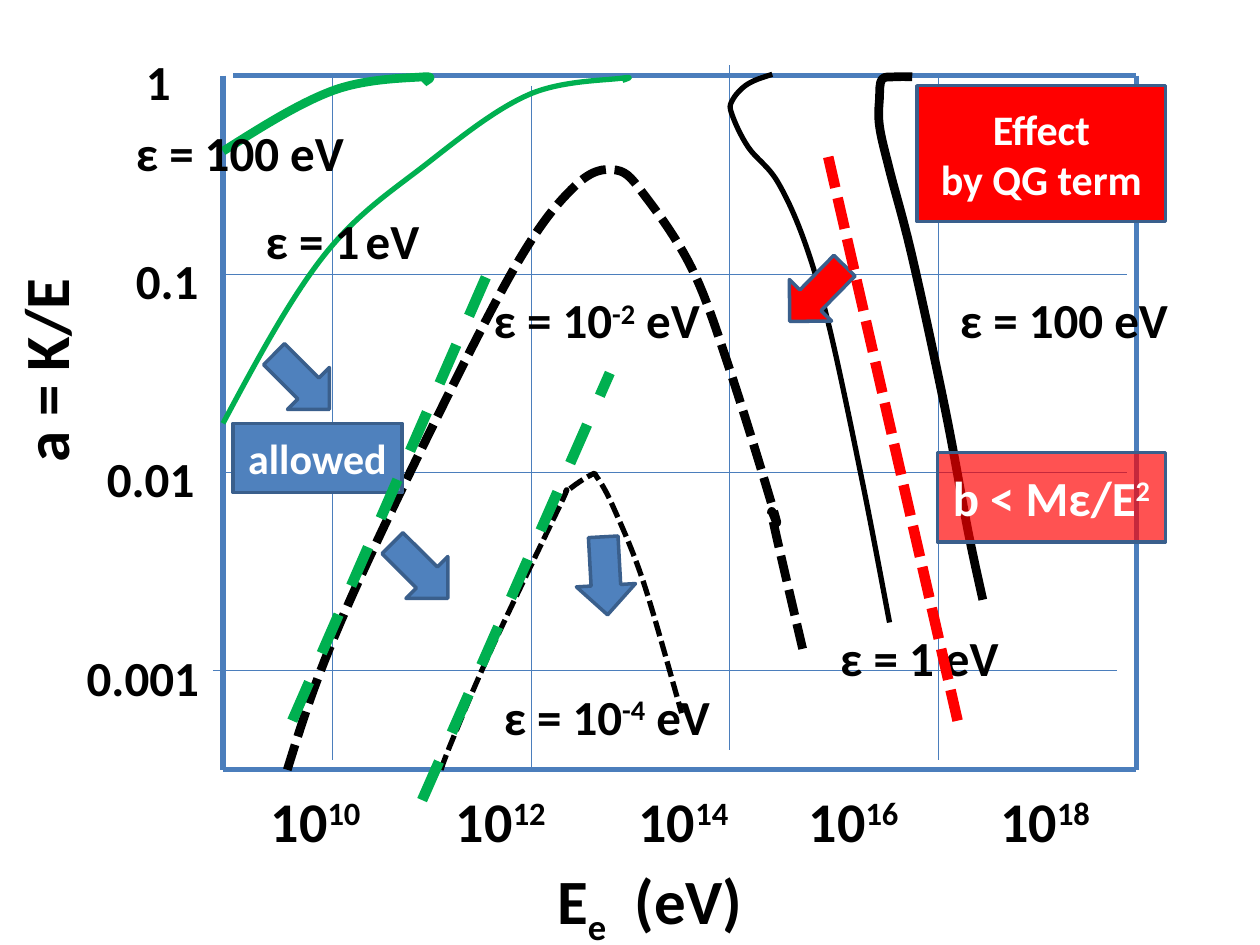
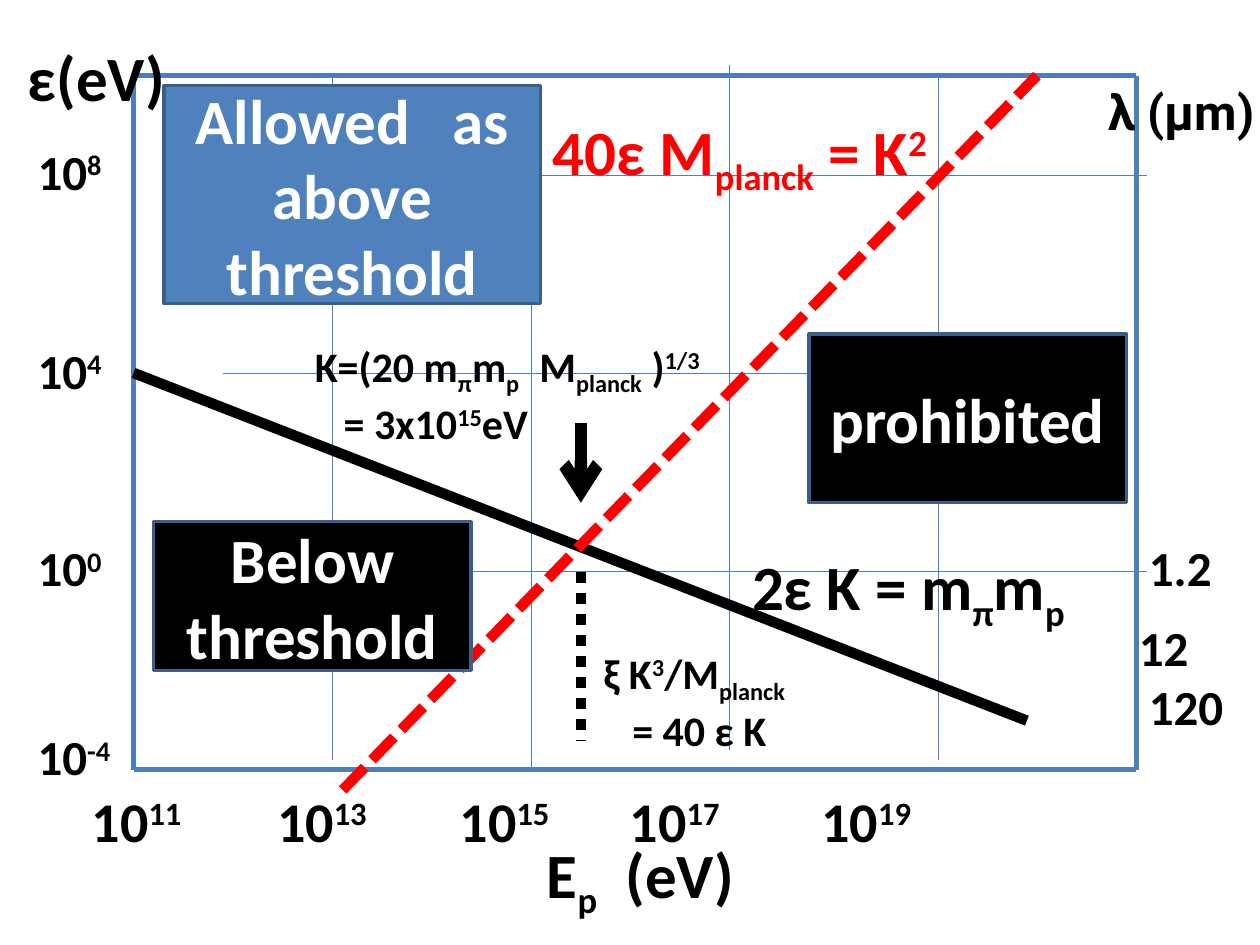
from pptx import Presentation, util as u
from pptx.dml.color import RGBColor
from pptx.enum import dml, shapes, text
from pptx.oxml import xmlchemy

BLACK = RGBColor(0x00, 0x00, 0x00)
WHITE = RGBColor(0xFF, 0xFF, 0xFF)
RED = RGBColor(0xFF, 0x00, 0x00)
GREEN = RGBColor(0x00, 0xB0, 0x50)
BLUE = RGBColor(0x4F, 0x81, 0xBD)
AXIS = RGBColor(0x4B, 0x7E, 0xBC)
EDGE = RGBColor(0x3A, 0x5F, 0x8C)
SOLID, DASH = None, dml.MSO_LINE.DASH
DOT, SHORT_DASH = dml.MSO_LINE.ROUND_DOT, dml.MSO_LINE.SQUARE_DOT

# Plot frame and grid, in inches
TOP, BOTTOM, RIGHT = 0.6, 6.11, 9.02
ROW = (BOTTOM - TOP) / 7
COLUMN_ORIGIN = 1.06
COLUMN = (RIGHT - COLUMN_ORIGIN) / 10.1
GRID_COLUMNS = ((2, 0), (4, 0.08), (6, -0.08), (8.1, 0))  # column, vertical shift
GRID_WIDTH, GRID_HEIGHT = 7.17, 5.43
TICK_TOP, TICK_WIDTH = 6.19, 7.78
TICK_STOPS = (0.28, 1.75, 3.2, 4.55, 6.07)
INDENT = 0.23

# Markup: {^x} raises, {_x} lowers, {>n} is a space widened by n points.
ENERGY_PLOT = {
    "left": 1.77, "top_left": 1.85,
    "grid_rows": ((6, 1.69), (2, 1.77), (4, 1.77)),  # row, left end
    "tick_left": 1.77, "exponents": (10, 12, 14, 16, 18),
}
# colour, width, dash, points that the curve passes through
CURVES = [
    (GREEN, 5, SOLID, [(1.77, 1.2), (2.64, 0.72), (3.36, 0.61), (3.36, 0.66)]),
    (GREEN, 3, SOLID, [(1.77, 3.36), (2.57, 2.03), (3.4, 1.29), (4.2, 0.75),
                       (4.94, 0.62), (4.94, 0.64)]),
    (BLACK, 3, SHORT_DASH, [(3.5, 6.11), (3.6, 5.85), (3.91, 5.13), (4.45, 4),
                            (4.5, 3.9), (4.69, 3.77), (4.74, 3.79), (4.87, 4.03),
                            (5.11, 4.63), (5.41, 5.66)]),
    (BLACK, 5, SHORT_DASH, [(2.28, 6.11), (2.63, 5.11), (3.24, 3.78), (4.07, 2.15),
                            (4.56, 1.48), (4.89, 1.35), (5.13, 1.57), (5.5, 2.15),
                            (5.8, 2.96), (6.15, 4.09), (6.13, 4.11), (6.37, 5.15)]),
    (BLACK, 3, SOLID, [(6.13, 0.59), (5.93, 0.67), (5.81, 0.8), (5.81, 0.91),
                       (5.94, 1.17), (6.17, 1.44), (6.39, 1.93), (6.59, 2.63),
                       (6.85, 3.85), (7.06, 4.94)]),
    (BLACK, 5, SOLID, [(7.24, 0.61), (7.11, 0.61), (7, 0.63), (6.98, 0.78), (6.98, 1),
                       (7.06, 1.35), (7.24, 2.04), (7.5, 3.24), (7.68, 4.2),
                       (7.8, 4.76)]),
]
# markup, left, top, width, size, then format changes
ENERGY_AXIS_LABELS = [
    ("1", 1.06, 0.36, 0.39, 28),
    ("0.1", 0.98, 1.94, 0.71, 28, {"wrap": False}),
    ("0.01", 0.75, 3.51, 0.98, 28),
    (" E{_e}{>8}(eV)", 4.21, 6.79, 2.44, 36),
    ("0.001", 0.59, 5.09, 1.26, 28),
]
CURVE_LABELS = [
    ("a = K/E", -0.48, 2.58, 1.67, 36, {"rotation": 270, "wrap": False}),
    ("ε = 1{^ }eV", 2.01, 1.62, 2.13, 28),
    ("ε = 10{^-2} eV", 3.82, 2.25, 2.44, 28),
    ("ε = 10{^-4} eV", 3.9, 5.4, 2.2, 28),
    ("ε = 1 eV", 6.57, 4.93, 2.2, 28),
    ("ε = 100 eV", 7.52, 2.25, 2.2, 28),
    ("ε = 100 eV", 0.98, 0.92, 2.2, 28),
]
# markup, left, top, width, height, size, fill, opacity in percent
ENERGY_BOXES = [
    ("Effect\nby QG term", 7.28, 0.68, 1.97, 1.08, 24, RED, 100),
    ("allowed", 1.85, 3.36, 1.34, 0.55, 24, BLUE, 100),
]
BOUND_BOXES = [("b < Mε/E{^2}", 7.44, 3.59, 1.81, 0.71, 28, RED, 68)]
# left, top, rotation, fill
BLOCK_ARROWS = [
    (2.16, 2.72, 314.9, BLUE),
    (3.1, 4.22, 314.9, BLUE),
    (6.25, 2.02, 44.5, RED),
    (4.57, 4.26, 356.8, BLUE),
]
# start, end, colour, width, dash
ENERGY_LINES = [
    ((2.32, 5.72), (3.9, 2.1), GREEN, 6, DASH),
    ((3.35, 6.35), (4.84, 2.96), GREEN, 6, DASH),
    ((7.6, 5.72), (6.57, 1.23), RED, 6, SHORT_DASH),
]

THRESHOLD_PLOT = {
    "left": 1.06, "top_left": 1.06,
    "grid_rows": ((5, 1.93), (1, 1.93), (3, 1.77)),
    "tick_left": 0.35, "exponents": (11, 13, 15, 17, 19),
}
THRESHOLD_LINES = [
    ((1.06, 2.96), (8.15, 5.72), BLACK, 6, SOLID),
    ((2.72, 6.27), (8.23, 0.6), RED, 6, SHORT_DASH),
]
THRESHOLD_LABELS = [
    ("10{^8}", 0.2, 1.07, 0.79, 28),
    (" E{_p}{>8}(eV)", 4.13, 6.58, 2.44, 36),
    ("2ε K = m{_π}m{_p}", 5.87, 4.3, 2.91, 36),
    ("K=(20 m{_π}m{_p}{>6}M{_planck} ){^1/3}\n= 3x10{^15}eV", 2.4, 2.65, 3.54, 24),
    ("1.2", 9.02, 4.22, 0.71, 28),
    ("120", 9.02, 5.32, 0.98, 28),
    ("12", 8.94, 4.85, 0.71, 28),
    ("λ (μm)", 8.7, 0.6, 1.54, 28, {"name": "Roboto"}),
    ("10{^0}", 0.2, 4.22, 0.79, 28),
    ("10{^4}", 0.2, 2.65, 0.79, 28),
    ("10{^-4}", 0.2, 5.72, 0.94, 28),
    ("40ε M{_planck} = K{^2}", 4.29, 0.84, 3.39, 36, {"color": RED}),
    (" ε(eV)", 0.01, 0.26, 1.45, 36, {"wrap": False}),
    ("ξ K{^3}/M{_planck}\n= 40 ε K", 4.69, 5.09, 2.13, 24),
]
THRESHOLD_BOXES = [
    ("Allowed{>16}as above\nthreshold", 1.3, 0.68, 2.99, 1.73, 36, BLUE, 100),
    ("prohibited", 6.42, 2.65, 2.52, 1.34, 36, BLACK, 100),
    ("Below threshold", 1.22, 4.14, 2.52, 1.18, 36, BLACK, 100),
]
CROSSING_LINES = [
    ((4.61, 3.36), (4.61, 3.99), BLACK, 7, SOLID, "arrow"),
    ((4.61, 4.54), (4.61, 5.88), BLACK, 6, DOT),
]


def inches(*lengths):
    return [u.Inches(length) for length in lengths]


def child(parent, tag, **attributes):
    """Append an element of the drawing namespace."""
    element = xmlchemy.OxmlElement(tag)
    for name, value in attributes.items():
        element.set(name, str(value))
    parent.append(element)
    return element


def style_line(line, color, width, dash=SOLID):
    line.color.rgb = color
    for name, value in {"width": u.Pt(width), "dash_style": dash}.items():
        setattr(line, name, value)


def write_markup(frame, markup, size, color, name="Calibri"):
    """Write one paragraph per line, with raised, lowered and widened runs."""
    for index, line in enumerate(markup.split("\n")):
        paragraph = frame.add_paragraph() if index else frame.paragraphs[0]
        for position, piece in enumerate(line.replace("}", "{").split("{")):
            if not piece:
                continue
            kind, content = (piece[0], piece[1:]) if position % 2 else ("", piece)
            run = paragraph.add_run()
            run.text = " " if kind == ">" else content
            for key, value in {"name": name, "size": u.Pt(size), "bold": True}.items():
                setattr(run.font, key, value)
            run.font.color.rgb = color
            properties = run._r.get_or_add_rPr()
            if kind == ">":
                properties.set("spc", content + "00")
            elif kind:
                properties.set("baseline", "30000" if kind == "^" else "-25000")


def add_label(slide, markup, left, top, width, size, changes=None):
    looks = {"rotation": 0, "color": BLACK, "name": "Calibri", "wrap": True,
             **(changes or {})}
    height = size / 60 * (markup.count("\n") + 1) + 0.1
    shape = slide.shapes.add_textbox(*inches(left, top, width, height))
    shape.rotation = looks["rotation"]
    frame = shape.text_frame
    for name, value in {"word_wrap": looks["wrap"],
                        "auto_size": text.MSO_AUTO_SIZE.SHAPE_TO_FIT_TEXT}.items():
        setattr(frame, name, value)
    write_markup(frame, markup, size, looks["color"], looks["name"])
    for paragraph in frame.paragraphs[1:]:
        paragraph._p.get_or_add_pPr().set("marL", str(u.Inches(INDENT)))
    return frame


def add_filled(slide, kind, left, top, width, height, fill):
    shape = slide.shapes.add_shape(kind, *inches(left, top, width, height))
    shape.shadow.inherit = False
    shape.fill.solid()
    shape.fill.fore_color.rgb = fill
    style_line(shape.line, EDGE, 2)
    return shape


def add_box(slide, markup, left, top, width, height, size, fill, opacity):
    shape = add_filled(slide, shapes.MSO_SHAPE.RECTANGLE, left, top, width, height, fill)
    if opacity < 100:
        color = shape._element.spPr.find(".//{*}solidFill/{*}srgbClr")
        child(color, "a:alpha", val=opacity * 1000)
    frame = shape.text_frame
    for name, value in {"word_wrap": True,
                        "vertical_anchor": text.MSO_ANCHOR.MIDDLE}.items():
        setattr(frame, name, value)
    write_markup(frame, markup, size, WHITE)
    for paragraph in frame.paragraphs:
        paragraph.alignment = text.PP_ALIGN.CENTER


def add_block_arrow(slide, left, top, rotation, fill):
    shape = add_filled(slide, shapes.MSO_SHAPE.DOWN_ARROW, left, top, 0.47, 0.62, fill)
    shape.rotation = rotation


def add_line(slide, start, end, color, width, dash=SOLID, tail=None):
    line = slide.shapes.add_connector(shapes.MSO_CONNECTOR.STRAIGHT,
                                      *inches(*start, *end))
    style_line(line.line, color, width, dash)
    if tail:
        child(line.line._get_or_add_ln(), "a:tailEnd", type=tail)
    child(line._element.spPr, "a:effectLst")


def smooth(points):
    """Give each stretch two controls and an end, with tangents set by neighbours."""
    stretches = []
    for index, (start, end) in enumerate(zip(points, points[1:])):
        after = points[min(index + 2, len(points) - 1)]
        second = [e - (a - s) / 6 for s, e, a in zip(start, end, after)]
        if index:
            before = points[index - 1]
            first = [s + (e - b) / 6 for b, s, e in zip(before, start, end)]
        else:
            first = [(s + c) / 2 for s, c in zip(start, second)]
        stretches.append((first, second, end))
    return stretches


def add_curve(slide, color, width, dash, points):
    start, *others = [inches(*point) for point in points]
    builder = slide.shapes.build_freeform(*start)
    builder.add_line_segments(others, close=False)
    shape = builder.convert_to_shape()
    shape.shadow.inherit = False
    shape.fill.background()
    style_line(shape.line, color, width, dash)
    for straight, stretch in zip(shape._element.findall(".//{*}lnTo"), smooth(points)):
        curved = xmlchemy.OxmlElement("a:cubicBezTo")
        for point in stretch:
            x, y = inches(*point)
            child(curved, "a:pt", x=x - shape.left, y=y - shape.top)
        straight.getparent().replace(straight, curved)


def add_plot(slide, left, top_left, grid_rows, tick_left, exponents):
    """Draw the frame, the grid and the powers of ten below it."""
    for start, end in (((left, TOP), (left, BOTTOM)), ((left, BOTTOM), (RIGHT, BOTTOM)),
                       ((RIGHT, TOP), (RIGHT, BOTTOM)), ((top_left, TOP), (RIGHT, TOP))):
        add_line(slide, start, end, AXIS, 3)
    for row, start in grid_rows:
        y = TOP + row * ROW
        add_line(slide, (start, y), (start + GRID_WIDTH, y), AXIS, 0.25, DOT)
    for column, shift in GRID_COLUMNS:
        x, y = COLUMN_ORIGIN + column * COLUMN, TOP + shift
        add_line(slide, (x, y + GRID_HEIGHT), (x, y), AXIS, 0.25, DOT)
    markup = "".join(f"\t10{{^{exponent}}}" for exponent in exponents)
    frame = add_label(slide, markup, tick_left, TICK_TOP, TICK_WIDTH, 32)
    stops = child(frame.paragraphs[0]._p.get_or_add_pPr(), "a:tabLst")
    for stop in TICK_STOPS:
        child(stops, "a:tab", pos=u.Inches(stop), algn="l")


# Each slide: its plot, then the layers from back to front
SLIDES = [
    (ENERGY_PLOT, [(add_label, ENERGY_AXIS_LABELS), (add_curve, CURVES),
                   (add_label, CURVE_LABELS), (add_box, ENERGY_BOXES),
                   (add_block_arrow, BLOCK_ARROWS), (add_line, ENERGY_LINES),
                   (add_box, BOUND_BOXES)]),
    (THRESHOLD_PLOT, [(add_line, THRESHOLD_LINES), (add_label, THRESHOLD_LABELS),
                      (add_box, THRESHOLD_BOXES), (add_line, CROSSING_LINES)]),
]


def main():
    presentation = Presentation()
    presentation.slide_width, presentation.slide_height = inches(10, 7.5)
    for plot, layers in SLIDES:
        slide = presentation.slides.add_slide(presentation.slide_layouts[6])
        add_plot(slide, **plot)
        for add, rows in layers:
            for row in rows:
                add(slide, *row)
    presentation.save("out.pptx")


if __name__ == "__main__":
    main()
